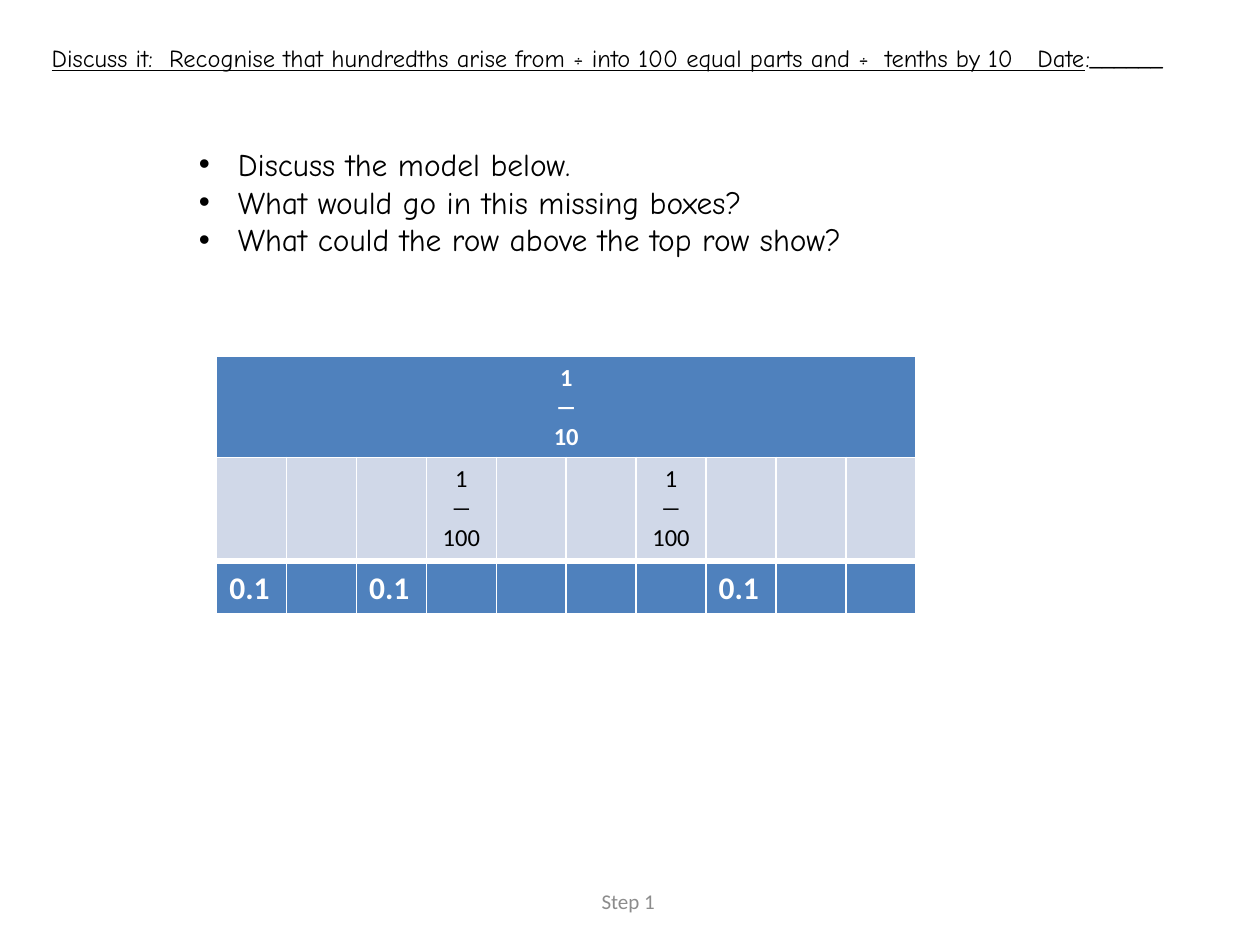
from dataclasses import dataclass

from lxml import etree
from pptx import Presentation
from pptx.dml.color import RGBColor
from pptx.enum import text as t
from pptx.oxml import ns
from pptx.util import Inches, Pt

BLACK = RGBColor(0x00, 0x00, 0x00)
WHITE = RGBColor(0xFF, 0xFF, 0xFF)
GREY = RGBColor(0x8C, 0x8C, 0x8C)
BLUE = RGBColor(0x4F, 0x81, 0xBD)
PALE_BLUE = RGBColor(0xD0, 0xD8, 0xE8)
HAND_FONT, PLAIN_FONT = "Comic Neue", "Calibri"
COLUMNS = 10
TABLE_LEFT, TABLE_WIDTH = 1.72, 5.55


@dataclass
class BarRow:
    """One row of the bar model; labels map a column to its lines of text."""
    labels: dict[int, list[str]]
    fill: RGBColor
    color: RGBColor
    size: int = 14
    bold: bool = False
    align: t.PP_ALIGN = t.PP_ALIGN.CENTER
    whole: bool = False


def add_run(paragraph, text: str, *, font: str, size: float, color: RGBColor,
            bold: bool = False, underline: bool = False) -> None:
    run = paragraph.add_run()
    run.text = text
    run.font.name = font
    run.font.size = Pt(size)
    run.font.color.rgb = color
    run.font.bold = bold
    run.font.underline = underline


def write_lines(frame, lines: list[str], *, align=t.PP_ALIGN.LEFT, **style) -> None:
    for index, line in enumerate(lines):
        paragraph = frame.add_paragraph() if index else frame.paragraphs[0]
        paragraph.alignment = align
        add_run(paragraph, line, **style)


def add_text_box(slide, left: float, top: float, width: float, height: float):
    frame = slide.shapes.add_textbox(
        Inches(left), Inches(top), Inches(width), Inches(height)).text_frame
    frame.word_wrap = True
    return frame


def add_bullet(paragraph) -> None:
    properties = paragraph._p.get_or_add_pPr()
    properties.set("marL", str(Inches(0.31)))
    properties.set("indent", str(-Inches(0.31)))
    etree.SubElement(properties, ns.qn("a:buFont"), typeface="Arial")
    etree.SubElement(properties, ns.qn("a:buChar"), char="•")


def add_bar_table(slide, top: float, row_height: float, rows: list[BarRow]) -> None:
    table = slide.shapes.add_table(
        len(rows), COLUMNS, Inches(TABLE_LEFT), Inches(top),
        Inches(TABLE_WIDTH), Inches(row_height * len(rows))).table
    for row_index, row in enumerate(rows):
        if row.whole:
            table.cell(row_index, 0).merge(table.cell(row_index, COLUMNS - 1))
        for column in range(COLUMNS):
            cell = table.cell(row_index, column)
            cell.fill.solid()
            cell.fill.fore_color.rgb = row.fill
            write_lines(cell.text_frame, row.labels.get(column, []), align=row.align,
                        font=PLAIN_FONT, size=row.size, color=row.color, bold=row.bold)


def add_title(slide) -> None:
    title = slide.shapes.title
    title.left, title.top = Inches(0.31), Inches(0.29)
    title.width, title.height = Inches(9.88), Inches(0.34)
    frame = title.text_frame
    frame.word_wrap = True
    frame.auto_size = t.MSO_AUTO_SIZE.NONE
    frame.vertical_anchor = t.MSO_ANCHOR.TOP
    style = dict(font=HAND_FONT, size=14, color=BLACK)
    write_lines(frame, ["Discuss it:  Recognise that hundredths arise from ÷ into 100 "
                        "equal parts and ÷  tenths by 10   Date"], underline=True, **style)
    add_run(frame.paragraphs[0], ":______", **style)


def main() -> None:
    presentation = Presentation()
    presentation.slide_width, presentation.slide_height = Inches(10), Inches(7.5)
    slide = presentation.slides.add_slide(presentation.slide_layouts[5])
    add_title(slide)

    questions = add_text_box(slide, 1.48, 1.1, 7.53, 1.31)
    write_lines(questions, ["Discuss the model below.",
                            "What would go in this missing boxes?",
                            "What could the row above the top row show?"],
                font=HAND_FONT, size=18, color=BLACK)
    for paragraph in questions.paragraphs:
        add_bullet(paragraph)

    tenth, hundredth = ["1", "―", "10"], ["1", "―", "100"]
    add_bar_table(slide, 2.83, 0.8, [
        BarRow({0: tenth}, BLUE, WHITE, bold=True, whole=True),
        BarRow({3: hundredth, 6: hundredth}, PALE_BLUE, BLACK),
    ])
    add_bar_table(slide, 4.47, 0.4, [
        BarRow({column: ["0.1"] for column in (0, 2, 7)}, BLUE, WHITE,
               size=18, bold=True, align=t.PP_ALIGN.LEFT),
    ])

    step = add_text_box(slide, 3.42, 6.95, 3.17, 0.4)
    step.vertical_anchor = t.MSO_ANCHOR.MIDDLE
    write_lines(step, ["Step 1 "], align=t.PP_ALIGN.CENTER,
                font=PLAIN_FONT, size=12, color=GREY)
    presentation.save("out.pptx")


if __name__ == "__main__":
    main()
